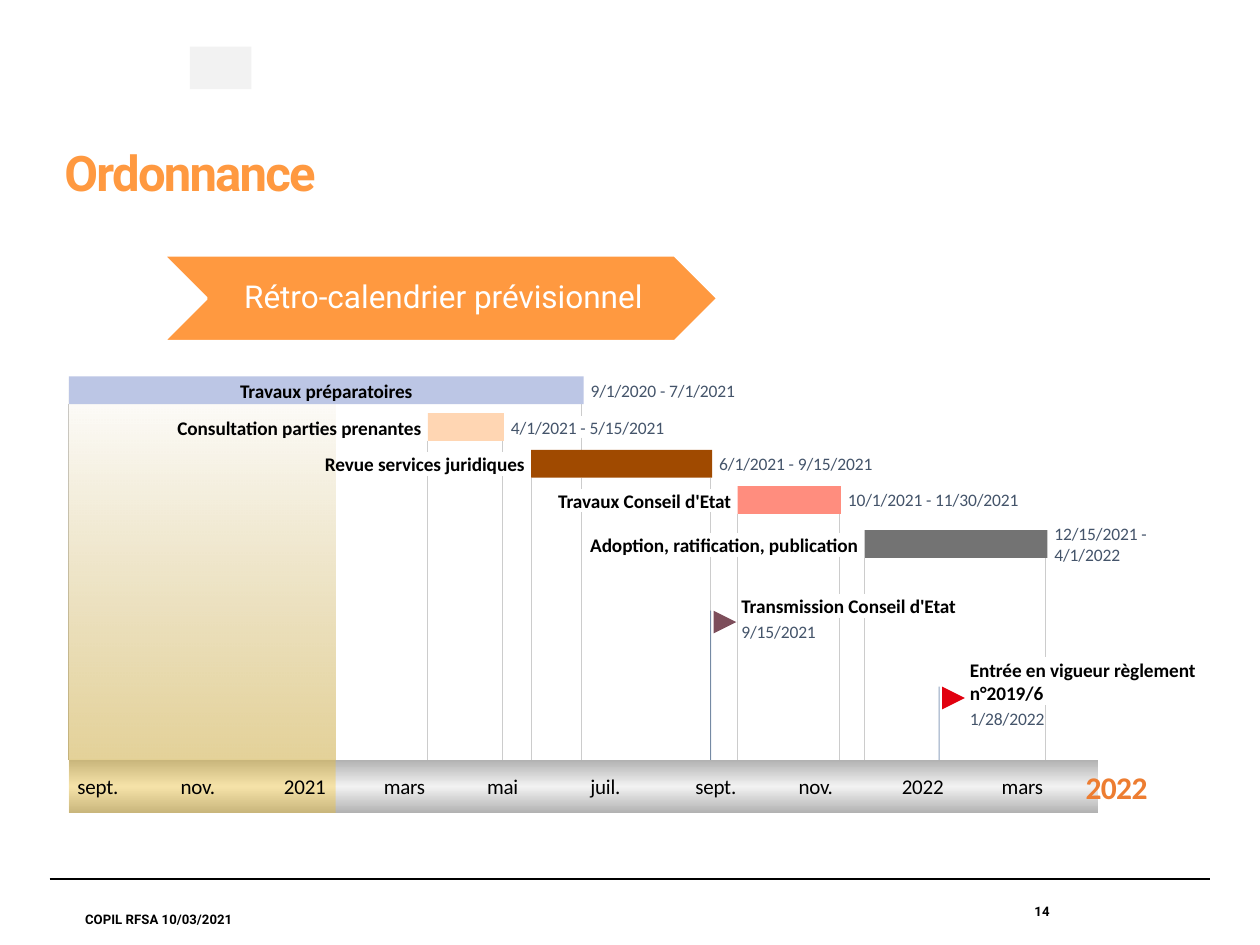
from collections import namedtuple

from pptx import Presentation
from pptx.dml.color import RGBColor
from pptx.enum.shapes import MSO_CONNECTOR as CONN, MSO_SHAPE as SHAPE
from pptx.enum.text import MSO_ANCHOR as ANCHOR, PP_ALIGN as ALIGN
from pptx.oxml import parse_xml
from pptx.oxml.ns import nsdecls, qn
from pptx.util import Cm, Pt

Box = namedtuple("Box", "x y w h")
Task = namedtuple("Task", "name dates start end top color name_w date_w date_lines", defaults=[1])
Milestone = namedtuple("Milestone", "name date day label_y flag_y color w h")

BLACK = RGBColor(0, 0, 0)
WHITE = RGBColor(0xFF, 0xFF, 0xFF)
ORANGE = RGBColor(0xFF, 0x99, 0x40)
RED = RGBColor(0xE1, 0x00, 0x0F)
PLUM = RGBColor(0x7D, 0x4E, 0x5B)
LILAC = RGBColor(0xBC, 0xC6, 0xE5)
PEACH = RGBColor(0xFF, 0xD6, 0xB3)
BROWN = RGBColor(0xA0, 0x4A, 0x00)
SALMON = RGBColor(0xFF, 0x8D, 0x7E)
GREY = RGBColor(0x73, 0x73, 0x73)
SILVER = RGBColor(0xB2, 0xB2, 0xB2)
PALE = RGBColor(0xF2, 0xF2, 0xF2)
GUIDE = RGBColor(0xCC, 0xCC, 0xCC)
NAVY = RGBColor(0x1F, 0x49, 0x7E)
SLATE = RGBColor(0x44, 0x54, 0x6A)
GOLD = RGBColor(0xFF, 0xC0, 0x00)
YEAR_ORANGE = RGBColor(0xED, 0x7D, 0x31)

TOTAL_DAYS = 608
ELAPSED_DAYS = 157.5
BAR_H, AXIS_H, NAME_H, DATE_H, FLAG = 0.56, 1.07, 0.48, 0.43, 0.46
MONTHS = [("sept.", 0), ("nov.", 61), ("2021", 122), ("mars", 181), ("mai", 242),
          ("juil.", 303), ("sept.", 365), ("nov.", 426), ("2022", 487), ("mars", 546)]
TASKS = [
    Task("Travaux préparatoires", "9/1/2020 - 7/1/2021", 0, 303, 0, LILAC, 3.53, 2.97),
    Task("Consultation parties prenantes", "4/1/2021 - 5/15/2021", 212, 256, 0.74, PEACH, 5.02, 3.15),
    Task("Revue services juridiques", "6/1/2021 - 9/15/2021", 273, 379, 1.48, BROWN, 4.15, 3.15),
    Task("Travaux Conseil d'Etat", "10/1/2021 - 11/30/2021", 395, 455, 2.21, SALMON, 3.53, 3.53),
    Task("Adoption, ratification, publication", "12/15/2021 - 4/1/2022", 470, 577, 3.1, GREY, 5.46, 1.98, 2),
]
MILESTONES = [
    Milestone("Transmission Conseil d'Etat", "9/15/2021", 379, 4.39, 4.72, PLUM, 4.8, 0.48),
    Milestone("Entrée en vigueur règlement n°2019/6", "1/28/2022", 514, 5.66, 6.25, RED, 4.75, 0.96),
]


def lengths(box):
    return [Cm(v) for v in box]


def add_run(p, text, size, color, font="Calibri", bold=False, spacing=0):
    r = p.add_run()
    r.text = text
    r.font.size, r.font.name, r.font.bold = Pt(size), font, bold
    r.font.color.rgb = color
    if spacing:
        r._r.get_or_add_rPr().set("spc", str(spacing))


def add_text(slide, box, text, size, color, align=ALIGN.LEFT, **style):
    tf = slide.shapes.add_textbox(*lengths(box)).text_frame
    tf.margin_left = tf.margin_right = tf.margin_top = tf.margin_bottom = 0
    tf.word_wrap, tf.vertical_anchor = True, ANCHOR.MIDDLE
    p = tf.paragraphs[0]
    p.alignment = align
    add_run(p, text, size, color, **style)


def add_block(slide, box, color, kind=SHAPE.RECTANGLE):
    s = slide.shapes.add_shape(kind, *lengths(box))
    s.shadow.inherit = False
    s.fill.solid()
    s.fill.fore_color.rgb = color
    s.line.fill.background()
    return s


def add_alpha(fill_element, percent):
    color = fill_element.find(qn("a:srgbClr"))
    color.append(parse_xml(f'<a:alpha {nsdecls("a")} val="{percent * 1000}"/>'))


def set_gradient(s, stops):
    gs = "".join(f'<a:gs pos="{pos * 1000}"><a:srgbClr val="{color}">'
                 f'<a:alpha val="{alpha * 1000}"/></a:srgbClr></a:gs>'
                 for pos, color, alpha in stops)
    grad = parse_xml(f'<a:gradFill {nsdecls("a")} rotWithShape="1"><a:gsLst>{gs}</a:gsLst>'
                     '<a:lin ang="5400000" scaled="0"/></a:gradFill>')
    spPr = s._element.spPr
    spPr.replace(spPr.find(qn("a:solidFill")), grad)


def add_line(slide, x1, y1, x2, y2, color, width):
    s = slide.shapes.add_connector(CONN.STRAIGHT, Cm(x1), Cm(y1), Cm(x2), Cm(y2))
    s.line.color.rgb, s.line.width = color, Pt(width)
    s._element.spPr.append(parse_xml(f'<a:effectLst {nsdecls("a")}/>'))
    return s


def task_boxes(box, task, day_w):
    x, y = box.x + task.start * day_w, box.y + task.top
    bar = Box(x, y, (task.end - task.start + 1) * day_w, BAR_H)
    name_x = x + (bar.w - task.name_w) / 2 if task.start == 0 else x - 0.13 - task.name_w
    name = Box(name_x, y + 0.05, task.name_w, NAME_H)
    date_h = DATE_H * task.date_lines
    date = Box(x + bar.w + 0.14, y + (BAR_H - date_h) / 2, task.date_w, date_h)
    return bar, name, date


def milestone_boxes(box, m, day_w):
    x = box.x + m.day * day_w
    name = Box(x + 0.62, box.y + m.label_y, m.w, m.h)
    date = Box(name.x, name.y + m.h + 0.06, 1.53, DATE_H)
    flag = Box(x + 0.06, box.y + m.flag_y, FLAG, FLAG)
    return name, date, flag


def add_guide(slide, x, top, bottom, obstacles):
    y = top
    for o in sorted(obstacles, key=lambda b: b.y):
        if o.x < x < o.x + o.w and o.y > y:
            add_line(slide, x, y, x, o.y, GUIDE, 0.6)
            y = o.y + o.h
    add_line(slide, x, y, x, bottom, GUIDE, 0.6)


def add_axis(slide, box, axis_y, day_w):
    elapsed_w = ELAPSED_DAYS * day_w
    s = add_block(slide, Box(box.x, box.y, elapsed_w, axis_y - box.y), GOLD)
    set_gradient(s, [(0, GOLD, 0), (100, GOLD, 30)])
    s._element.spPr.find(qn("a:effectLst")).append(parse_xml(
        f'<a:outerShdw {nsdecls("a")} blurRad="0" dist="0" dir="0"><a:srgbClr val="000000">'
        '<a:alpha val="50000"/></a:srgbClr></a:outerShdw>'))
    s = add_block(slide, Box(box.x, axis_y, box.w, AXIS_H), SILVER)
    set_gradient(s, [(0, SILVER, 100), (50, PALE, 100), (100, SILVER, 100)])
    s = add_block(slide, Box(box.x, axis_y, elapsed_w, AXIS_H), GOLD)
    add_alpha(s._element.spPr.find(qn("a:solidFill")), 30)
    for month, day in MONTHS:
        add_text(slide, Box(box.x + 0.17 + day * day_w, axis_y + 0.28, 1.3, 0.51),
                 month, 12, BLACK, spacing=-10)
    add_text(slide, Box(box.x + box.w - 0.53, axis_y + 0.15, 1.8, 0.79), "2022", 18,
             YEAR_ORANGE, ALIGN.CENTER, bold=True, spacing=-40)


def add_timeline(slide, box):
    day_w, axis_y = box.w / TOTAL_DAYS, box.y + box.h - AXIS_H
    tasks = [(t, *task_boxes(box, t, day_w)) for t in TASKS]
    milestones = [(m, *milestone_boxes(box, m, day_w)) for m in MILESTONES]
    obstacles = [b for row in tasks + milestones for b in row[1:]]
    for t, bar, _, _ in tasks:
        for day in (t.start, t.end):
            add_guide(slide, box.x + day * day_w, bar.y + BAR_H, axis_y, obstacles)
    for m, _, _, flag in milestones:
        x = box.x + m.day * day_w
        pole = add_line(slide, x, flag.y, x, axis_y, NAVY, 0.6)
        add_alpha(pole.line._ln.find(qn("a:solidFill")), 50)
    add_axis(slide, box, axis_y, day_w)
    for m, name, date, flag in milestones:
        add_text(slide, name, m.name, 11, BLACK, bold=True, spacing=-5)
        add_text(slide, date, m.date, 10, SLATE, spacing=-5)
        add_block(slide, flag, m.color, SHAPE.FLOWCHART_MERGE).rotation = 270
    for t, bar, name, date in tasks:
        add_block(slide, bar, t.color)
        align = ALIGN.CENTER if t.start == 0 else ALIGN.RIGHT
        add_text(slide, name, t.name, 11, BLACK, align, bold=True, spacing=-5)
        add_text(slide, date, t.dates, 10, SLATE, spacing=-5)


def add_header(slide, box):
    add_block(slide, Box(box.x + 2.79, box.y, 1.24, 0.86), PALE)
    add_text(slide, Box(box.x + 0.26, box.y + 1.87, box.w, 1.3), "Ordonnance", 28, ORANGE,
             font="Roboto", bold=True, spacing=-100)


def add_banner(slide, box):
    s = add_block(slide, box, ORANGE, SHAPE.CHEVRON)
    s.line.color.rgb, s.line.width = WHITE, Pt(2)
    tf = s.text_frame
    tf.margin_left, tf.margin_right = Cm(0.2), Cm(0.08)
    tf.margin_top = tf.margin_bottom = Cm(0.08)
    tf.word_wrap, tf.vertical_anchor = True, ANCHOR.MIDDLE
    p = tf.paragraphs[0]
    p.alignment, p.line_spacing = ALIGN.CENTER, 0.9
    add_run(p, "Rétro-calendrier prévisionnel", 18, WHITE, "Roboto")


def add_footer(slide, box):
    add_line(slide, box.x, box.y, box.x + box.w, box.y, BLACK, 0.8)
    style = dict(font="Roboto", bold=True)
    add_text(slide, Box(box.x + 16.4, box.y, 3.76, 1.32), "14", 7.5, BLACK, ALIGN.RIGHT, **style)
    add_text(slide, Box(box.x - 0.91, box.y + 0.36, 6.22, 0.91), "COPIL RFSA 10/03/2021", 7.5,
             BLACK, ALIGN.CENTER, **style)


def main():
    prs = Presentation()
    prs.slide_width, prs.slide_height = Cm(25.4), Cm(19.05)
    slide = prs.slides.add_slide(prs.slide_layouts[6])
    add_header(slide, Box(1.04, 0.94, 23.4, 3.3))
    add_timeline(slide, Box(1.39, 7.59, 20.75, 8.8))
    add_banner(slide, Box(3.28, 5.14, 11.2, 1.75))
    add_footer(slide, Box(1, 17.72, 23.4, 1.32))
    prs.save("out.pptx")


if __name__ == "__main__":
    main()
